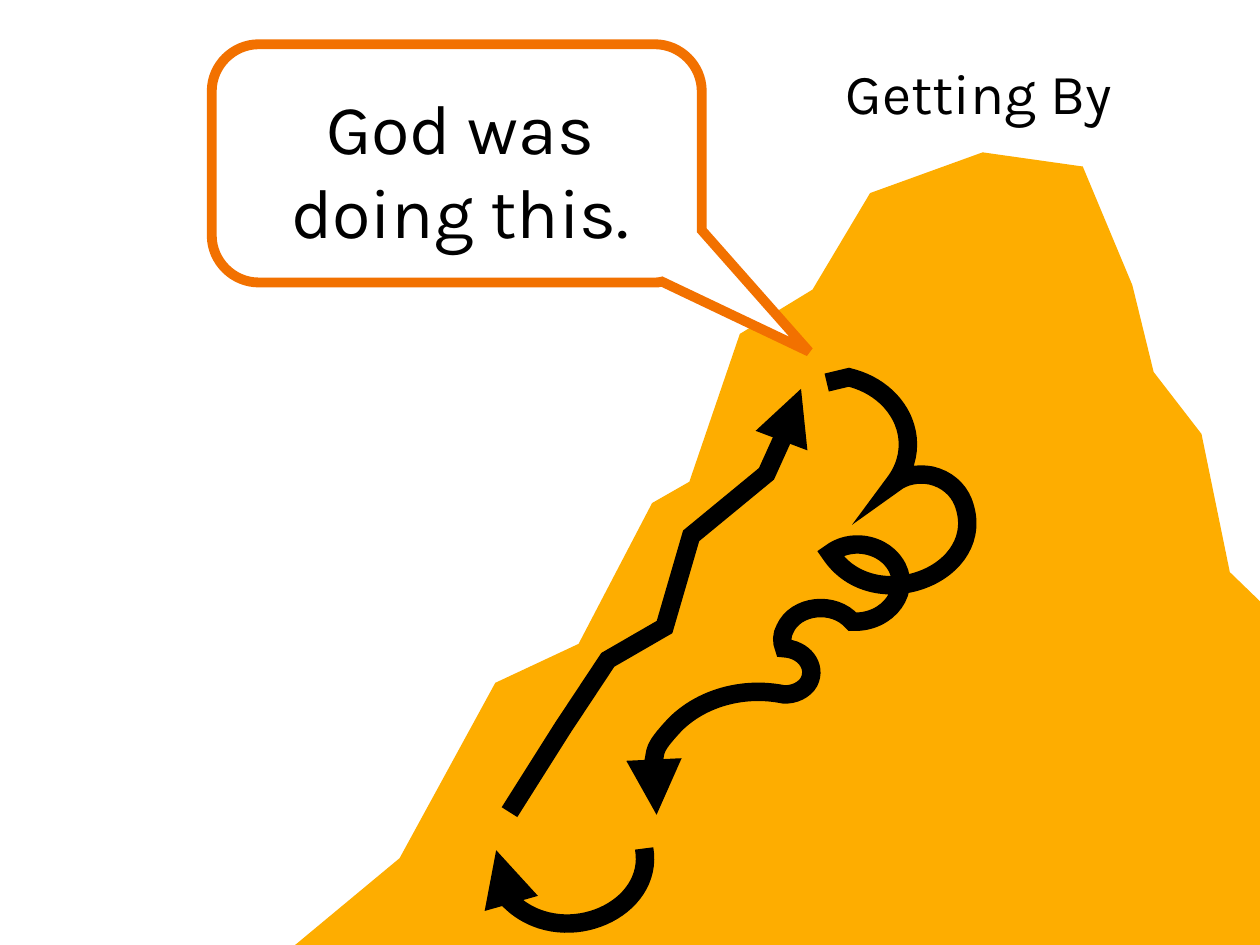
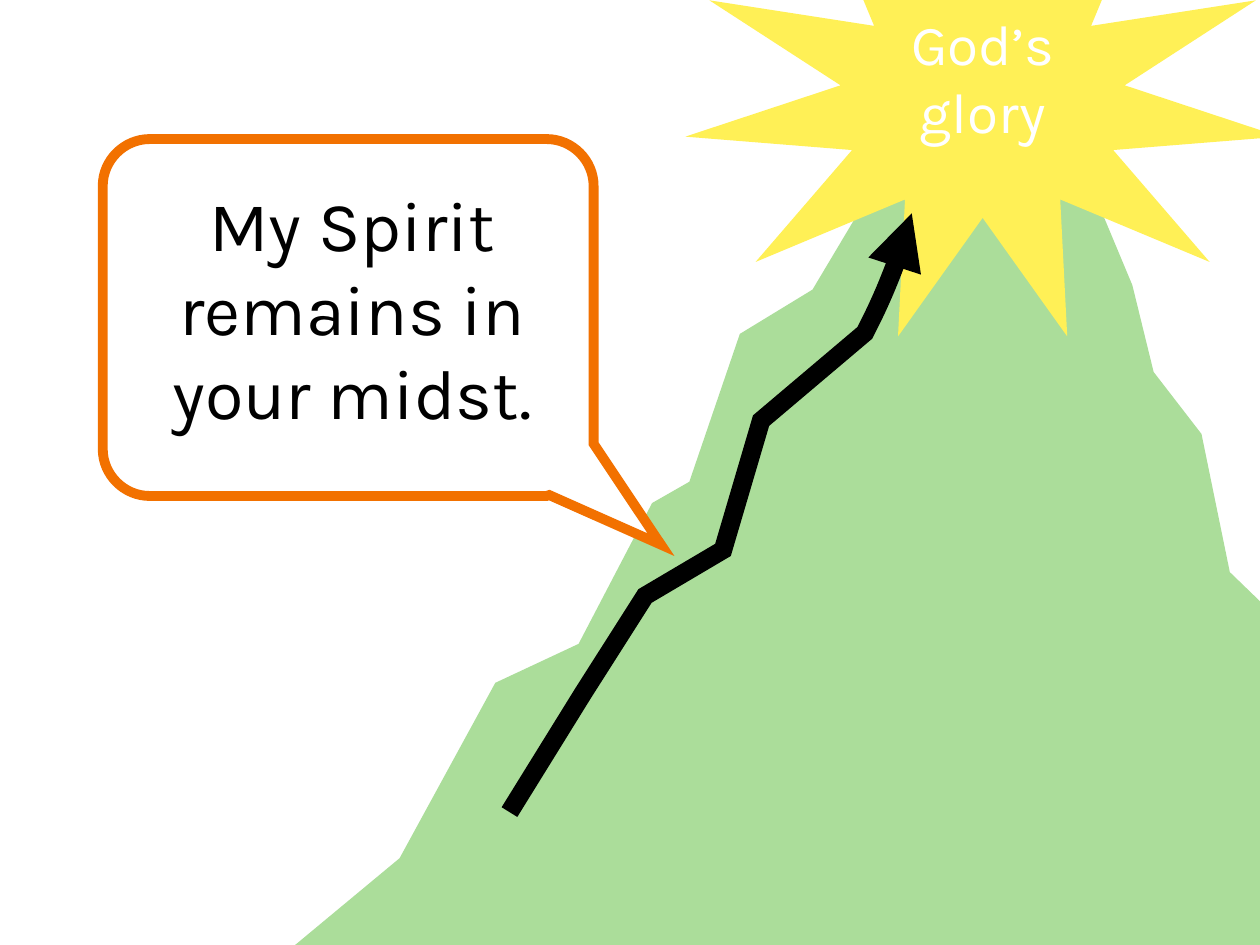
from math import cos, pi, sin

from lxml.etree import SubElement as Sub
from pptx import Presentation
from pptx.dml.color import RGBColor as Rgb
from pptx.enum.text import MSO_ANCHOR as Anchor, MSO_AUTO_SIZE as Fit, PP_ALIGN as Align
from pptx.oxml.ns import qn
from pptx.util import Inches, Pt

HUES = {
    "ink": "000000", "paper": "FFFFFF", "frame": "F27100",
    "gold": "FEAD00", "green": "ABDD9A", "sun": "FFF056",
}
FONT = "Karla"
STEPS = 24

HILL = [
    (4.51, 9.69), (5.59, 7.71), (6.53, 7.27), (7.36, 5.68), (7.78, 5.44),
    (8.35, 3.77), (9.17, 3.27), (9.82, 2.18), (11.09, 1.72), (12.22, 1.88),
    (12.78, 3.22), (13.02, 4.2), (13.56, 4.9), (13.88, 6.46), (14.48, 7.04),
    (15.04, 8.95), (15.58, 10.42), (12.67, 11.17), (2.44, 11.41), (4.51, 9.69),
]
CLIMB = [
    (5.75, 9.17), (6.35, 8.22), (6.86, 7.45), (7.5, 7.08),
    (7.8, 6.05), (8.65, 5.35), (8.94, 4.71), (9.04, 4.39),
]
FALL = [
    (9.33, 4.32), (9.58, 4.26),
    (9.74, 4.3, 9.88, 4.37, 10, 4.48),
    (10.29, 4.75, 10.33, 5.15, 10.09, 5.46),
    (10.2, 5.37, 10.36, 5.34, 10.51, 5.37),
    (10.68, 5.41, 10.81, 5.52, 10.87, 5.67),
    (11.18, 6.48, 9.86, 6.99, 9.37, 6.25),
    (9.59, 6.08, 9.93, 6.13, 10.09, 6.35),
    (10.31, 6.65, 10.03, 7.04, 9.62, 7.02),
    (9.41, 6.78, 8.98, 6.83, 8.86, 7.1),
    (8.82, 7.17, 8.82, 7.25, 8.85, 7.32),
    (9.07, 7.33, 9.22, 7.52, 9.13, 7.7),
    (9.08, 7.79, 8.96, 7.85, 8.84, 7.84),
    (8.39, 7.75, 7.92, 7.88, 7.62, 8.18),
    (7.35, 8.47, 7.27, 8.85, 7.41, 9.2),
]
TURN = [
    (7.27, 9.58),
    (7.39, 10.27, 6.4, 10.71, 5.81, 10.22),
    (5.71, 10.13, 5.64, 10.03, 5.61, 9.91),
    (5.58, 9.81, 5.57, 9.7, 5.6, 9.6),
]
ASCENT = [
    (5.75, 9.17), (6.58, 7.83), (7.28, 6.73), (8.16, 6.21),
    (8.59, 4.75), (9.76, 3.76),
    (9.91, 3.47, 10.04, 3.17, 10.15, 2.86),
    (10.2, 2.71, 10.25, 2.56, 10.29, 2.41),
]


def hue(name):
    return Rgb.from_string(HUES[name])


def bend(start, curve):
    ends = [start, curve[:2], curve[2:4], curve[4:]]
    for step in range(1, STEPS + 1):
        t = step / STEPS
        mix = ((1 - t) ** 3, 3 * t * (1 - t) ** 2, 3 * t * t * (1 - t), t ** 3)
        yield tuple(sum(m * e[axis] for m, e in zip(mix, ends)) for axis in (0, 1))


def flat(path):
    dots = []
    for part in path:
        dots.extend([part] if len(part) == 2 else bend(dots[-1], part))
    return [(Inches(x), Inches(y)) for x, y in dots]


def curve(shape, path, close):
    left, top = shape.left, shape.top
    way = shape._element.find(".//" + qn("a:path"))
    for node in list(way):
        way.remove(node)
    for i, part in enumerate(path):
        kind = "moveTo" if i == 0 else "lnTo" if len(part) == 2 else "cubicBezTo"
        node = Sub(way, qn("a:" + kind))
        for x, y in zip(part[::2], part[1::2]):
            Sub(node, qn("a:pt"), x=str(Inches(x) - left), y=str(Inches(y) - top))
    if close:
        Sub(way, qn("a:close"))


def draw(shapes, path, fill=None, line=None, width=0, arrow=False):
    first, *rest = flat(path)
    pen = shapes.build_freeform(*first, scale=1.0)
    pen.add_line_segments(rest, close=False)
    shape = pen.convert_to_shape()
    curve(shape, path, fill is not None)
    shape.shadow.inherit = False
    if fill:
        shape.fill.solid()
        shape.fill.fore_color.rgb = hue(fill)
    else:
        shape.fill.background()
    if not line:
        shape.line.fill.background()
        return
    shape.line.color.rgb = hue(line)
    shape.line.width = Pt(width)
    edge = shape.line._get_or_add_ln()
    Sub(edge, qn("a:miter"), lim="400000")
    if arrow:
        Sub(edge, qn("a:tailEnd"), type="triangle")


def trail(shapes, path):
    draw(shapes, path, line="ink", width=15, arrow=True)


def write(shape, text, size, ink="ink"):
    frame = shape.text_frame
    frame.text = text
    frame.word_wrap = True
    frame.auto_size = Fit.NONE
    frame.vertical_anchor = Anchor.MIDDLE
    frame.margin_left = frame.margin_right = Inches(0.06)
    frame.margin_top = frame.margin_bottom = Inches(0.06)
    para = frame.paragraphs[0]
    para.alignment = Align.CENTER
    para.font.name = FONT
    para.font.size = Pt(size)
    para.font.color.rgb = hue(ink)


def label(shapes, box, text, size, ink="ink"):
    write(shapes.add_textbox(*map(Inches, box)), text, size, ink)


def bubble(slide, box, foot, tip, area, text):
    left, top, right, low = box
    r, k = 0.53, 0.24
    path = [
        (left + r, top),
        (left + k, top, left, top + k, left, top + r),
        (left, low - r),
        (left, low - k, left + k, low, left + r, low),
        (right - r, low),
        (right - r + 0.02, low, foot - 0.02, low, foot, low - 0.01),
        tip, (right, low - 0.59), (right, top + r),
        (right, top + k, right - k, top, right - r, top),
        (left + r, top),
    ]
    group = slide.shapes.add_group_shape()
    draw(group.shapes, path, "paper", "frame", 8)
    label(group.shapes, area, text, 57)


def burst(slide, text):
    spikes = 11
    path = []
    for i in range(2 * spikes):
        wide, high = (1.62, 1.31) if i % 2 else (3.39, 2.76)
        turn = pi * i / spikes
        path.append((11.09 + wide * sin(turn), 1.15 - high * cos(turn)))
    group = slide.shapes.add_group_shape()
    draw(group.shapes, path, "sun")
    label(group.shapes, (9.64, -0.05, 2.9, 1.83), text, 46, "paper")


def scene(deck, layout, fill):
    slide = deck.slides.add_slide(deck.slide_layouts[layout])
    draw(slide.shapes, HILL, fill)
    return slide


def main():
    deck = Presentation()
    deck.slide_width, deck.slide_height = Inches(14.22), Inches(10.67)

    slide = scene(deck, 5, "gold")
    title = slide.shapes.title
    title.left, title.top = Inches(8.95), Inches(0.55)
    title.width, title.height = Inches(4.19), Inches(0.97)
    write(title, "Getting By", 46)
    for path in (CLIMB, FALL, TURN):
        trail(slide.shapes, path)
    bubble(slide, (2.39, 0.5, 7.92, 3.19), 7.47, (9.13, 3.97),
           (2.97, 0.76, 4.45, 2.28), "God was doing this.")

    slide = scene(deck, 6, "green")
    burst(slide, "God’s glory")
    trail(slide.shapes, ASCENT)
    bubble(slide, (1.16, 1.57, 6.7, 5.6), 6.2, (7.46, 6.15),
           (1.75, 1.79, 4.45, 3.36), "My Spirit remains in your midst.")

    deck.save("out.pptx")


if __name__ == "__main__":
    main()
